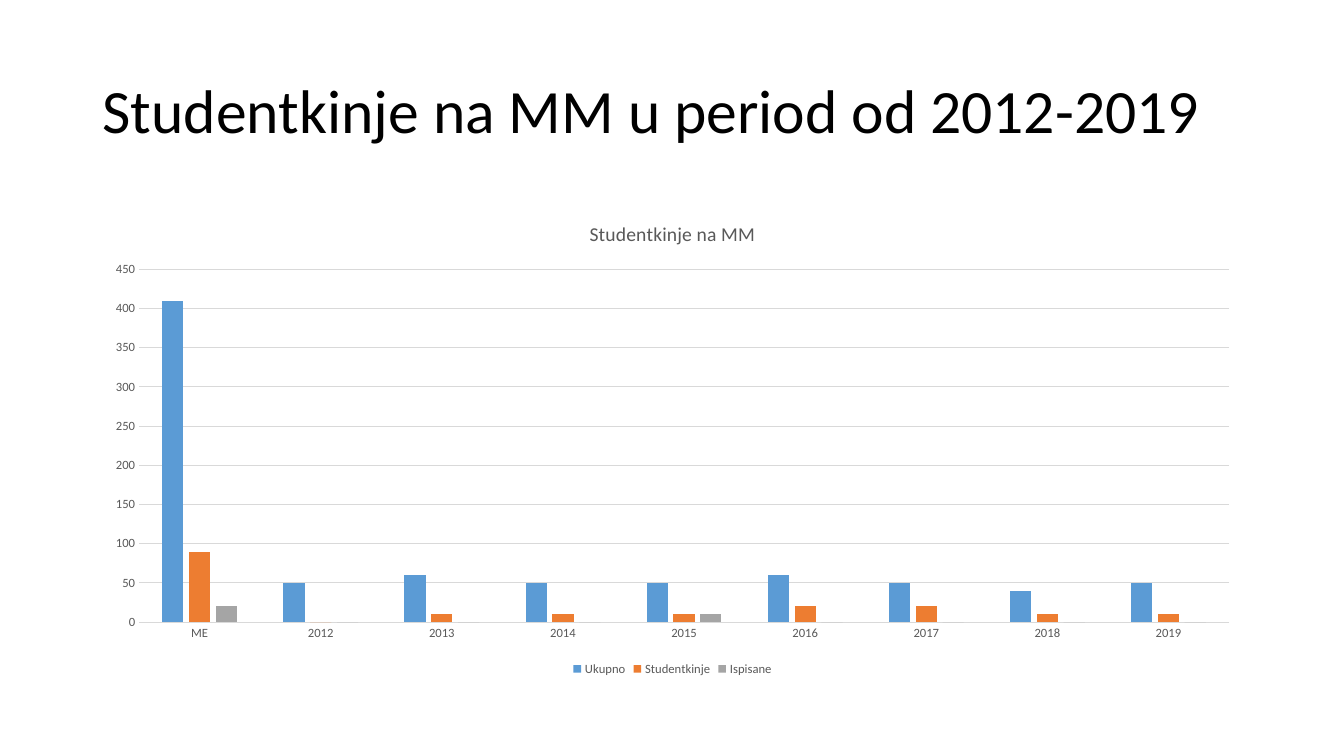
from pptx import Presentation
from pptx.chart.data import CategoryChartData
from pptx.dml.color import RGBColor
from pptx.enum.chart import XL_CHART_TYPE as ChartType
from pptx.enum.chart import XL_LEGEND_POSITION as LegendPosition
from pptx.enum.chart import XL_TICK_MARK as TickMark
from pptx.enum.text import MSO_ANCHOR as Anchor
from pptx.util import Pt

EMU_PER_PX = 9144
FONT = "Calibri"
BLACK, GREY, RULE = "000000", "595959", "D9D9D9"

CATEGORIES = ["ME", *map(str, range(2012, 2020))]
SERIES = [
    ("Ukupno", "5B9BD5", [410, 50, 60, 50, 50, 60, 50, 40, 50]),
    ("Studentkinje", "ED7D31", [90, 0, 10, 10, 10, 20, 20, 10, 10]),
    ("Ispisane", "A5A5A5", [20, 0, 0, 0, 10, 0, 0, 0, 0]),
]


def px(*lengths):
    return [length * EMU_PER_PX for length in lengths]


def color(value):
    return RGBColor.from_string(value)


def apply(target, **values):
    for name, value in values.items():
        setattr(target, name, value)


class SlideBuilder:
    """Holds the text style and the current slide."""

    def __init__(self, presentation, font):
        self.font = font
        self.slide = presentation.slides.add_slide(presentation.slide_layouts[6])

    def style_font(self, font, size, hex_color):
        apply(font, name=self.font, size=Pt(size), bold=False)
        font.color.rgb = color(hex_color)

    def style_line(self, line, hex_color):
        line.width = Pt(0.75)
        line.color.rgb = color(hex_color)

    def title(self, text, box, size):
        frame = self.slide.shapes.add_textbox(*px(*box)).text_frame
        apply(frame, word_wrap=True, vertical_anchor=Anchor.MIDDLE)
        paragraph = frame.paragraphs[0]
        apply(paragraph, text=text, line_spacing=0.9)
        self.style_font(paragraph.runs[0].font, size, BLACK)

    def column_chart(self, title, categories, series, box):
        data = CategoryChartData()
        data.categories = categories
        for name, _, values in series:
            data.add_series(name, values)
        chart = self.slide.shapes.add_chart(
            ChartType.COLUMN_CLUSTERED, *px(*box), data
        ).chart
        self.style_font(chart.font, 10, BLACK)

        apply(chart, has_title=True, has_legend=True)
        title_frame = chart.chart_title.text_frame
        title_frame.text = title
        self.style_font(title_frame.paragraphs[0].runs[0].font, 14, GREY)
        chart.chart_title.include_in_layout = False
        apply(chart.legend, position=LegendPosition.BOTTOM, include_in_layout=False)
        self.style_font(chart.legend.font, 9, GREY)

        for axis in (chart.category_axis, chart.value_axis):
            apply(axis, major_tick_mark=TickMark.NONE, minor_tick_mark=TickMark.NONE)
            self.style_font(axis.tick_labels.font, 9, GREY)
        self.style_line(chart.category_axis.format.line, RULE)
        apply(chart.value_axis, minimum_scale=0, maximum_scale=450, major_unit=50)
        chart.value_axis.format.line.fill.background()
        self.style_line(chart.value_axis.major_gridlines.format.line, RULE)

        plot = chart.plots[0]
        apply(plot, gap_width=219, overlap=-27, vary_by_categories=False)
        for columns, (_, fill_color, _) in zip(plot.series, series):
            columns.invert_if_negative = False
            columns.format.fill.solid()
            columns.format.fill.fore_color.rgb = color(fill_color)


def main():
    presentation = Presentation()
    width, height = px(1333, 750)
    apply(presentation, slide_width=width, slide_height=height)
    builder = SlideBuilder(presentation, FONT)
    builder.title("Studentkinje na MM u period od 2012-2019", (92, 40, 1150, 145), 44)
    builder.column_chart("Studentkinje na MM", CATEGORIES, SERIES, (92, 200, 1150, 475))
    presentation.save("out.pptx")


if __name__ == "__main__":
    main()
